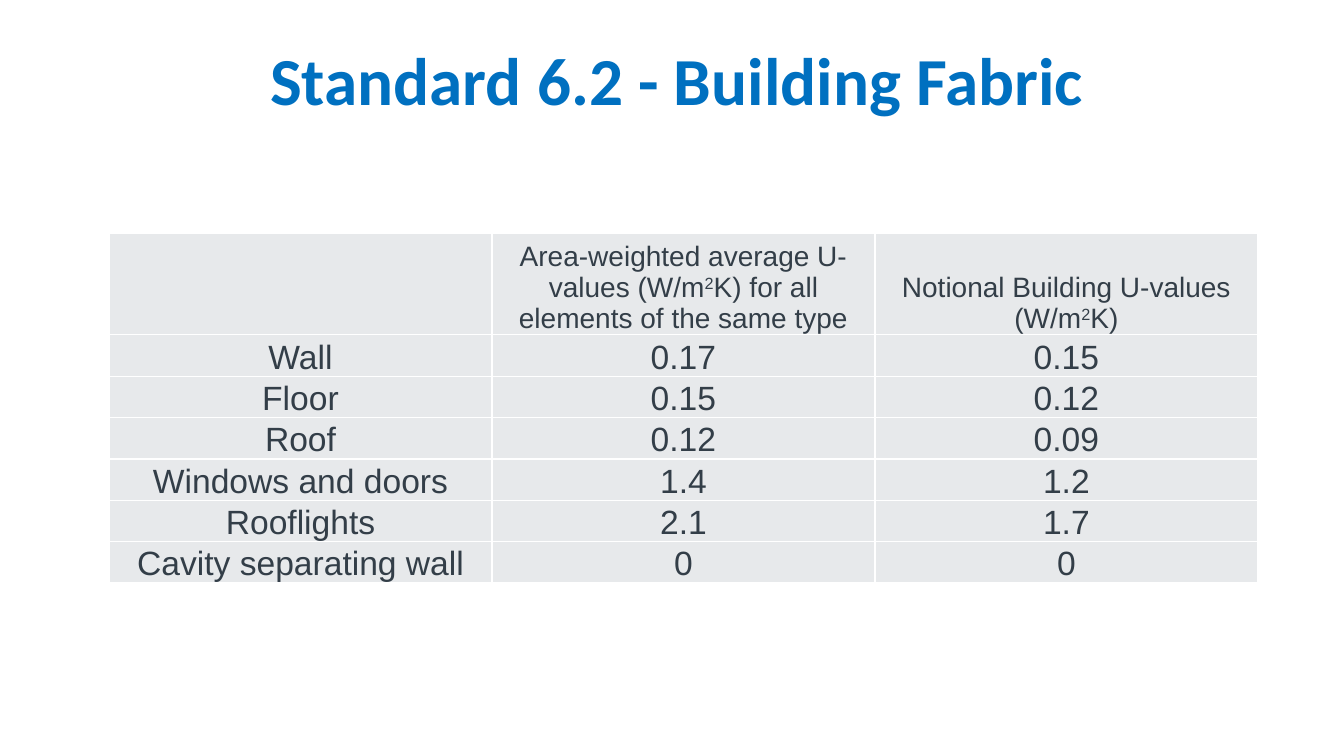
"""Build the Standard 6.2 building fabric slide with its table of U-values."""
from lxml import etree
from pptx import Presentation
from pptx.dml.color import RGBColor
from pptx.enum.text import MSO_ANCHOR, PP_ALIGN
from pptx.oxml.ns import qn
from pptx.util import Emu, Pt

CENTER = PP_ALIGN.CENTER
MIDDLE = MSO_ANCHOR.MIDDLE
BOTTOM = MSO_ANCHOR.BOTTOM
COLORS = {"title": "0070C0", "text": "333E48", "cell": "E7E9EB", "border": "FFFFFF"}
SCALE = 914400 / 100.8


def px(length):
    return Emu(round(length * SCALE))


def write_text(text_frame, text, size, color, font="Arial", bold=False, line_spacing=None):
    paragraph = text_frame.paragraphs[0]
    paragraph.alignment = CENTER
    paragraph.line_spacing = line_spacing
    for index, part in enumerate(text.split("^")):
        run = paragraph.add_run()
        run.text = part
        run.font.name = font
        run.font.size = Pt(size)
        run.font.bold = bold
        run.font.color.rgb = RGBColor.from_string(COLORS[color])
        if index % 2:
            run._r.get_or_add_rPr().set("baseline", "30000")


presentation = Presentation()
presentation.slide_width = px(1344)
presentation.slide_height = px(756)
slide = presentation.slides.add_slide(presentation.slide_layouts[6])

title = slide.shapes.add_textbox(px(77), px(44), px(1200), px(84))
title.text_frame.word_wrap = True
title.text_frame.vertical_anchor = MIDDLE
write_text(title.text_frame, "Standard 6.2 - Building Fabric", 48, "title",
           font="Calibri", bold=True, line_spacing=0.8)

table_rows = [
    ("", "Area-weighted average U-values (W/m^2^K) for all elements of the same type",
     "Notional Building U-values (W/m^2^K)"),
    ("Wall", "0.17", "0.15"),
    ("Floor", "0.15", "0.12"),
    ("Roof", "0.12", "0.09"),
    ("Windows and doors", "1.4", "1.2"),
    ("Rooflights", "2.1", "1.7"),
    ("Cavity separating wall", "0", "0"),
]
header_height, row_height, column_width = 94, 40, 383
table = slide.shapes.add_table(
    len(table_rows), 3, px(109), px(233), px(3 * column_width),
    px(header_height + row_height * (len(table_rows) - 1))).table
for column in table.columns:
    column.width = px(column_width)

for row_index, values in enumerate(table_rows):
    table.rows[row_index].height = px(row_height if row_index else header_height)
    for column_index, value in enumerate(values):
        cell = table.cell(row_index, column_index)
        cell.margin_left = cell.margin_right = cell.margin_top = px(1)
        cell.margin_bottom = 0
        cell.vertical_anchor = BOTTOM
        properties = cell._tc.get_or_add_tcPr()
        for side in ("a:lnL", "a:lnR", "a:lnT", "a:lnB"):
            line = etree.SubElement(properties, qn(side), w=str(Pt(1)))
            line_fill = etree.SubElement(line, qn("a:solidFill"))
            etree.SubElement(line_fill, qn("a:srgbClr"), val=COLORS["border"])
        cell.fill.solid()
        cell.fill.fore_color.rgb = RGBColor.from_string(COLORS["cell"])
        if value:
            write_text(cell.text_frame, value, 24 if row_index else 20, "text")

presentation.save("out.pptx")
